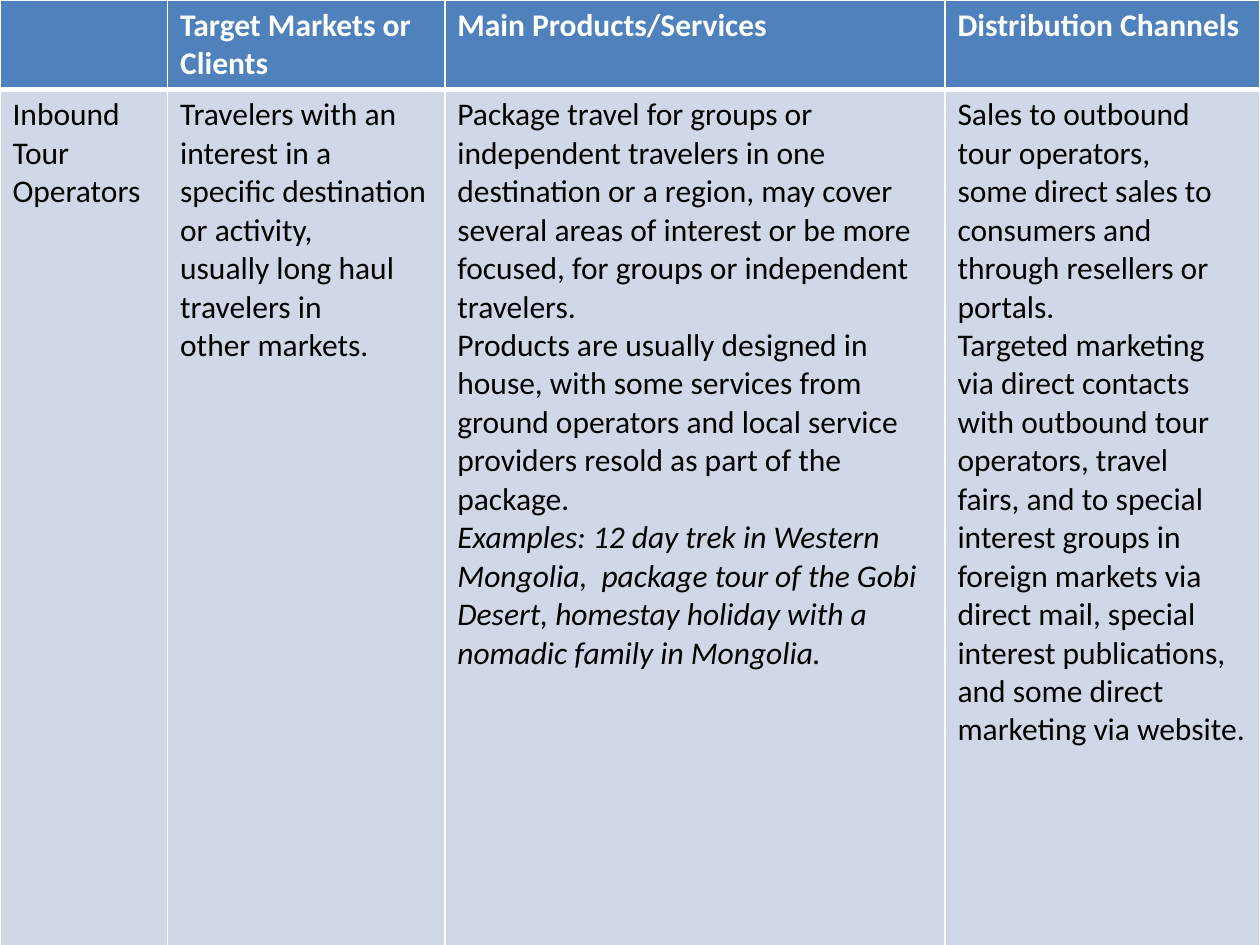
from pptx import Presentation
from pptx.dml.color import RGBColor
from pptx.oxml import parse_xml
from pptx.oxml.ns import nsdecls
from pptx.util import Inches, Pt

BLUE = RGBColor(0x4F, 0x81, 0xBD)
PALE = RGBColor(0xD0, 0xD8, 0xE8)
WHITE = RGBColor(0xFF, 0xFF, 0xFF)
BLACK = RGBColor(0, 0, 0)

COLS = [1.33, 2.2, 3.97, 2.5]
ROWS = [0.7, 7.49]

HEADS = ["", "Target Markets or Clients", "Main Products/Services",
         "Distribution Channels"]
BODY = [
    ["Inbound Tour", "Operators"],
    ["Travelers with an interest in a",
     "specific destination or activity,",
     "usually long haul travelers in",
     "other markets."],
    ["Package travel for groups or independent travelers in one  destination "
     "or a region, may cover several areas of interest or be more focused, "
     "for groups or independent travelers.",
     "Products are usually designed in house, with some services from ground "
     "operators and local service",
     "providers resold as part of the package.",
     "Examples: 12 day trek in Western Mongolia,  package tour of the Gobi "
     "Desert, homestay holiday with a nomadic family in Mongolia."],
    ["Sales to outbound tour operators,",
     "some direct sales to consumers and",
     "through resellers or portals.",
     "Targeted marketing via direct contacts",
     "with outbound tour operators, travel",
     "fairs, and to special interest groups in",
     "foreign markets via direct mail, special",
     "interest publications, and some direct",
     "marketing via website."],
]


def add_edges(cell, widths):
    """Draw white borders; widths in points by side L, R, T, B."""
    props = cell._tc.get_or_add_tcPr()
    for side, width in widths.items():
        props.append(parse_xml(
            f'<a:ln{side} {nsdecls("a")} w="{Pt(width)}">'
            f'<a:solidFill><a:srgbClr val="{WHITE}"/></a:solidFill>'
            f'</a:ln{side}>'))


def fill_cell(cell, lines, fill, color, bold):
    cell.fill.solid()
    cell.fill.fore_color.rgb = fill
    cell.text_frame.text = "\n".join(lines)
    for para in cell.text_frame.paragraphs:
        para.font.size = Pt(18)
        for run in para.runs:
            font = run.font
            font.name, font.size = "Calibri", Pt(18)
            font.bold, font.color.rgb = bold, color
            font.italic = run.text.startswith("Examples:")


def add_grid(slide):
    frame = slide.shapes.add_table(
        len(ROWS), len(COLS), 0, 0, Inches(sum(COLS)), Inches(sum(ROWS)))
    table = frame.table
    for col, width in zip(table.columns, COLS):
        col.width = Inches(width)
    for row, height in zip(table.rows, ROWS):
        row.height = Inches(height)

    # Header row above, details below, split by a thick rule
    for i, (head, lines) in enumerate(zip(HEADS, BODY)):
        top, low = table.cell(0, i), table.cell(1, i)
        add_edges(top, {"L": 1, "R": 1, "T": 1, "B": 3})
        add_edges(low, {"L": 1, "R": 1, "T": 3, "B": 1})
        fill_cell(top, [head], BLUE, WHITE, True)
        fill_cell(low, lines, PALE, BLACK, False)


def main():
    deck = Presentation()
    deck.slide_width, deck.slide_height = Inches(10), Inches(7.5)
    slide = deck.slides.add_slide(deck.slide_layouts[6])
    add_grid(slide)
    deck.save("out.pptx")


if __name__ == "__main__":
    main()
